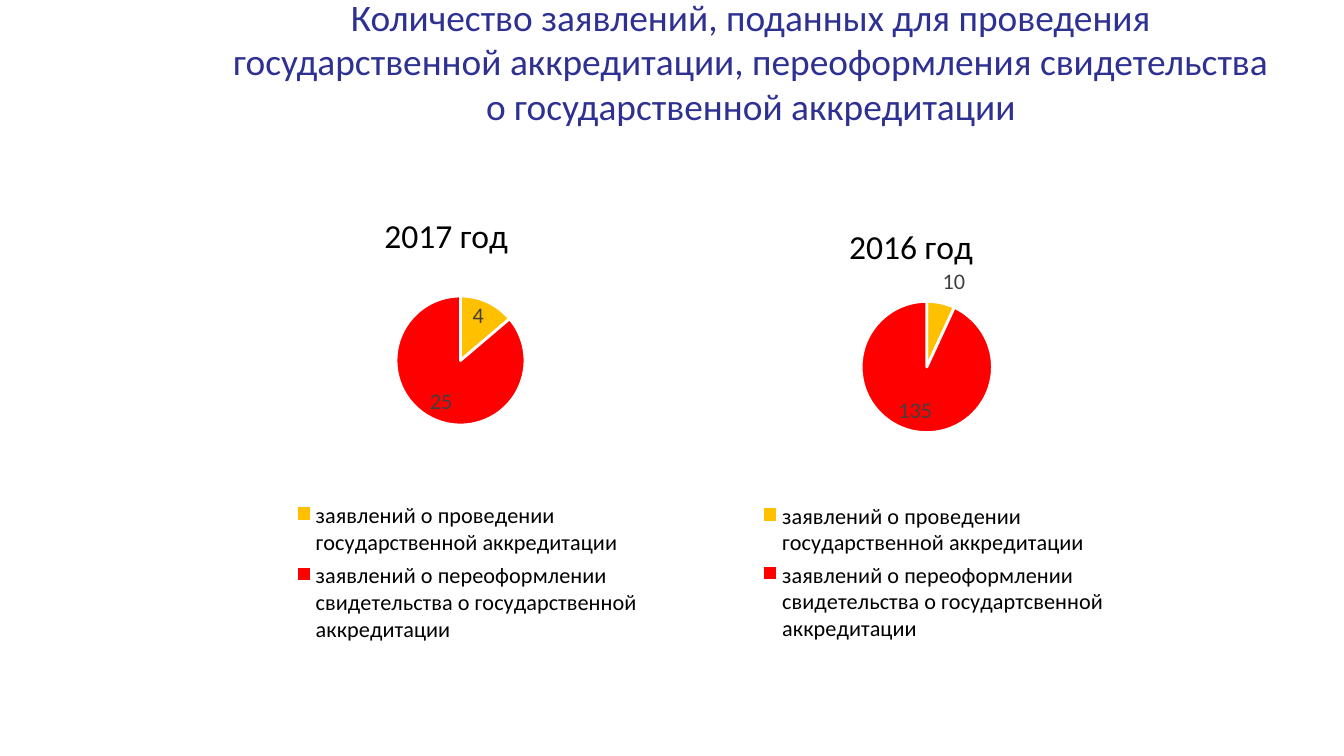
"""Build a slide with two pie charts of accreditation applications by year."""
from dataclasses import dataclass

from lxml.etree import SubElement
from pptx import Presentation
from pptx.chart.data import CategoryChartData
from pptx.dml.color import RGBColor
from pptx.enum.chart import XL_CHART_TYPE as ChartType
from pptx.enum.chart import XL_LABEL_POSITION as LabelPosition
from pptx.enum.chart import XL_LEGEND_POSITION as LegendPosition
from pptx.enum.text import MSO_ANCHOR, MSO_AUTO_SIZE, PP_ALIGN
from pptx.oxml import parse_xml
from pptx.oxml.ns import nsdecls, qn
from pptx.util import Emu, Pt

HEADING = ("Количество заявлений, поданных для проведения государственной "
           "аккредитации, переоформления свидетельства о государственной аккредитации")
HEADING_BOX = (216, 8, 1070, 106)
YEARS = [
    {"title": "2016 год", "box": (680, 188, 453, 484), "counts": {
        "заявлений о проведении государственной аккредитации": 10,
        "заявлений о переоформлении свидетельства о государтсвенной аккредитации": 135}},
    {"title": "2017 год", "box": (218, 176, 445, 499), "counts": {
        "заявлений о проведении государственной аккредитации": 4,
        "заявлений о переоформлении свидетельства о государственной аккредитации": 25}},
]
TITLE_SPOT = {"x": 0.36, "y": 0.06}
PIE_SPOT = {"x": 0.4, "y": 0.2, "w": 0.29, "h": 0.34}
LEGEND_SPOT = {"x": 0.16, "y": 0.64, "w": 0.8, "h": 0.31}


@dataclass(frozen=True)
class Theme:
    font: str = "Calibri"
    heading: str = "2E3192"
    text: str = "000000"
    label: str = "404040"
    edge: str = "FFFFFF"
    slices: tuple = ("FFC000", "FF0000")
    heading_size: float = 20
    year_size: float = 18
    base_size: float = 10
    note_size: float = 11.9


THEME = Theme()


def px(length):
    return Emu(round(length * 914400 / 134.4))


def style(font, size, color):
    font.name = THEME.font
    font.size = Pt(size)
    font.bold = False
    font.color.rgb = RGBColor.from_string(color)


def place(part, index, spot, inner=False):
    for old in part.findall(qn("c:layout")):
        part.remove(old)
    layout = parse_xml(f"<c:layout {nsdecls('c')}><c:manualLayout/></c:layout>")
    manual = layout[0]
    if inner:
        SubElement(manual, qn("c:layoutTarget")).set("val", "inner")
    for axis in "xy":
        SubElement(manual, qn(f"c:{axis}Mode")).set("val", "edge")
    for key, share in spot.items():
        SubElement(manual, qn(f"c:{key}")).set("val", str(share))
    part.insert(index, layout)


def add_year(slide, year):
    counts = year["counts"]
    applications = CategoryChartData()
    applications.categories = list(counts)
    applications.add_series("Series 1", list(counts.values()))
    chart = slide.shapes.add_chart(
        ChartType.PIE, *map(px, year["box"]), applications).chart
    style(chart.font, THEME.base_size, THEME.text)

    chart.has_title = True
    caption = chart.chart_title.text_frame.paragraphs[0].add_run()
    caption.text = year["title"]
    style(caption.font, THEME.year_size, THEME.text)

    chart.has_legend = True
    chart.legend.position = LegendPosition.BOTTOM
    chart.legend.include_in_layout = False
    style(chart.legend.font, THEME.note_size, THEME.text)

    pie = chart.plots[0]
    pie.vary_by_categories = True
    for index, color in enumerate(THEME.slices):
        wedge = pie.series[0].points[index].format
        wedge.fill.solid()
        wedge.fill.fore_color.rgb = RGBColor.from_string(color)
        wedge.line.color.rgb = RGBColor.from_string(THEME.edge)
        wedge.line.width = Pt(1.5)
    labels = pie.series[0].data_labels
    labels.show_value = True
    labels.position = LabelPosition.BEST_FIT
    style(labels.font, THEME.note_size, THEME.label)

    root = chart.element.find(qn("c:chart"))
    place(root.find(qn("c:title")), 1, TITLE_SPOT)
    place(root.find(qn("c:plotArea")), 0, PIE_SPOT, inner=True)
    place(root.find(qn("c:legend")), 1, LEGEND_SPOT)


def main():
    deck = Presentation()
    deck.slide_width, deck.slide_height = px(1344), px(756)
    slide = deck.slides.add_slide(deck.slide_layouts[5])

    heading = slide.shapes.title
    heading.left, heading.top, heading.width, heading.height = map(px, HEADING_BOX)
    frame = heading.text_frame
    frame.word_wrap = True
    frame.auto_size = MSO_AUTO_SIZE.NONE
    frame.vertical_anchor = MSO_ANCHOR.MIDDLE
    frame.paragraphs[0].alignment = PP_ALIGN.CENTER
    words = frame.paragraphs[0].add_run()
    words.text = HEADING
    style(words.font, THEME.heading_size, THEME.heading)

    for year in YEARS:
        add_year(slide, year)
    deck.save("out.pptx")


if __name__ == "__main__":
    main()
